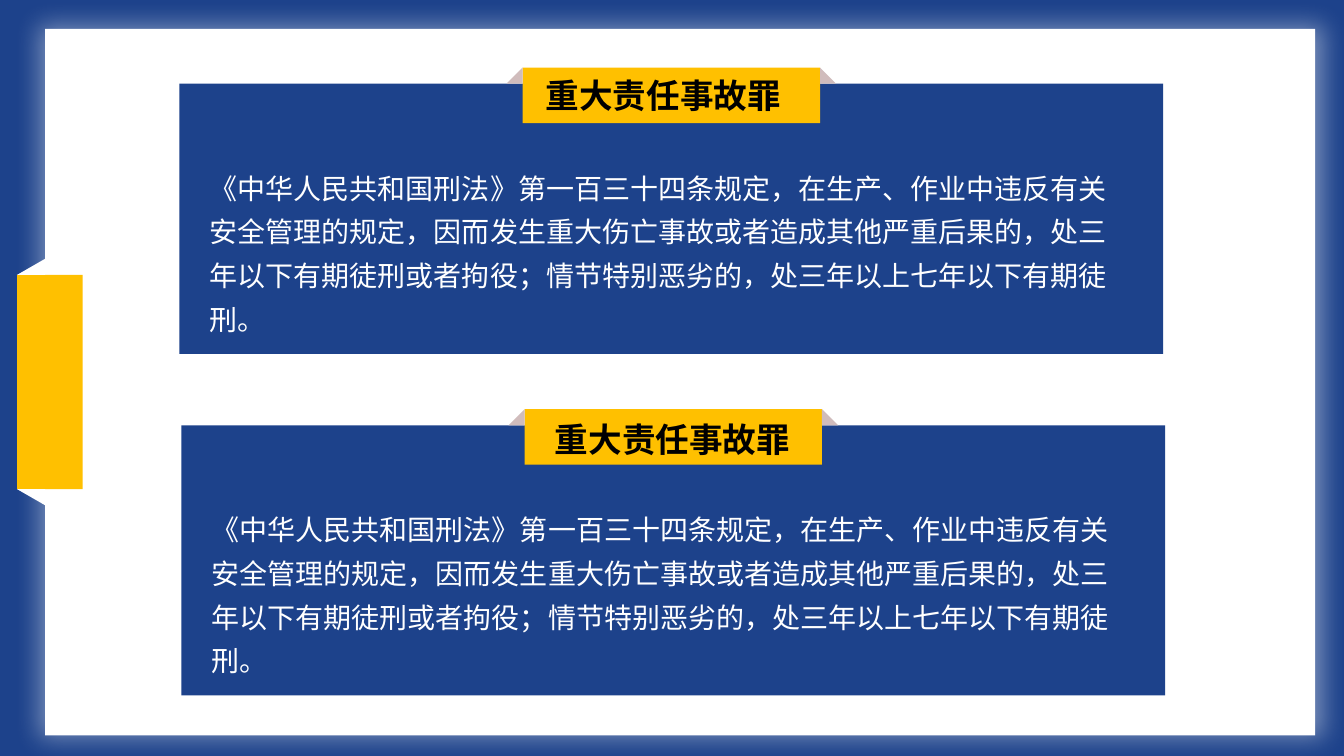
import pptx
import pptx.util
import pptx.dml.color
import pptx.enum.shapes
import pptx.enum.text
import pptx.oxml
import pptx.oxml.ns

# Content
HEADING = "重大责任事故罪"
LAW = ("《中华人民共和国刑法》第一百三十四条规定，在生产、作业中违反有关安全管理的规定，"
       "因而发生重大伤亡事故或者造成其他严重后果的，处三年以下有期徒刑或者拘役；"
       "情节特别恶劣的，处三年以上七年以下有期徒刑。")
# Each card: left, top, heading offset x, heading offset y, heading width
CARDS = [
    (128.2, 59.8, 234, -10, 223.2),
    (129.6, 303.8, 236.2, -8, 229),
]
FONT = "Noto Sans CJK SC"
BLUE, GOLD, WHITE, BLACK, FOLD = "1D428B", "FFC000", "FFFFFF", "000000", "D0BCBC"
Pt = pptx.util.Pt
KIND = pptx.enum.shapes.MSO_SHAPE
ALIGN = pptx.enum.text.PP_ALIGN


def rgb(value):
    return pptx.dml.color.RGBColor.from_string(value)


def add_block(s, x, y, w, h, color, kind=KIND.RECTANGLE, flip=""):
    sp = s.shapes.add_shape(kind, Pt(x), Pt(y), Pt(w), Pt(h))
    sp.shadow.inherit = False
    sp.fill.solid()
    sp.fill.fore_color.rgb = rgb(color)
    sp.line.fill.background()
    for axis in flip:
        sp._element.spPr.xfrm.set("flip" + axis, "1")
    return sp


def add_text(s, text, x, y, w, h, size, color, bold=False, align=ALIGN.LEFT, spacing=1.0):
    tf = s.shapes.add_textbox(Pt(x), Pt(y), Pt(w), Pt(h)).text_frame
    tf.word_wrap = True
    tf.auto_size = pptx.enum.text.MSO_AUTO_SIZE.SHAPE_TO_FIT_TEXT
    p = tf.paragraphs[0]
    p.alignment, p.line_spacing = align, spacing
    r = p.add_run()
    r.text = text
    r.font.size, r.font.bold, r.font.name = Pt(size), bold, FONT
    r.font.color.rgb = rgb(color)
    ea = pptx.oxml.parse_xml(
        f'<a:ea {pptx.oxml.ns.nsdecls("a")} typeface="{FONT}"/>')
    r.font._element.find(pptx.oxml.ns.qn("a:latin")).addnext(ea)


def add_glow_shadow(sp, color, alpha, blur, dist):
    effects = sp._element.spPr.find(pptx.oxml.ns.qn("a:effectLst"))
    effects.append(pptx.oxml.parse_xml(
        f'<a:outerShdw {pptx.oxml.ns.nsdecls("a")} blurRad="{Pt(blur)}" dist="{Pt(dist)}"'
        f' dir="0" sx="101000" sy="101000" algn="ctr" rotWithShape="0">'
        f'<a:srgbClr val="{color}"><a:alpha val="{alpha * 1000}"/></a:srgbClr></a:outerShdw>'))


def add_card(s, x, y, head_dx, head_dy, head_w):
    card_w, card_h, ribbon_w, ribbon_h, fold = 702.7, 193, 212.4, 39.6, 11.5
    ribbon_x, ribbon_y = x + (card_w - ribbon_w) / 2, y - fold
    add_block(s, x, y, card_w, card_h, BLUE)
    add_block(s, ribbon_x, ribbon_y, ribbon_w, ribbon_h, GOLD)
    for fold_x, flip in ((ribbon_x + ribbon_w, ""), (ribbon_x - fold, "H")):
        add_block(s, fold_x, ribbon_y, fold, fold, FOLD, KIND.RIGHT_TRIANGLE, flip)
    add_text(s, HEADING, x + head_dx, y + head_dy, head_w, 36, 24, BLACK,
             bold=True, align=ALIGN.CENTER)
    add_text(s, LAW, x + 14.4, y + 51.8, 672, 101.5, 20, WHITE, spacing=1.3)


prs = pptx.Presentation()
prs.slide_width, prs.slide_height = Pt(960), Pt(540)
s = prs.slides.add_slide(prs.slide_layouts[6])
s.background.fill.solid()
s.background.fill.fore_color.rgb = rgb(BLUE)

# White page with soft edge
page = add_block(s, 32.2, 20.6, 907.2, 504.7, WHITE)
add_glow_shadow(page, WHITE, 40, 18, 1)

# Gold side tab with folded corners
tab_x, tab_y, tab_h, corner_h = 12.2, 196.4, 153, 11.5
add_block(s, tab_x, tab_y, 46.8, tab_h, GOLD)
for corner_y, flip in ((tab_y - corner_h, "H"), (tab_y + tab_h, "HV")):
    add_block(s, tab_x, corner_y, 20, corner_h, WHITE, KIND.RIGHT_TRIANGLE, flip)

# Law cards
for card in CARDS:
    add_card(s, *card)

prs.save("out.pptx")
